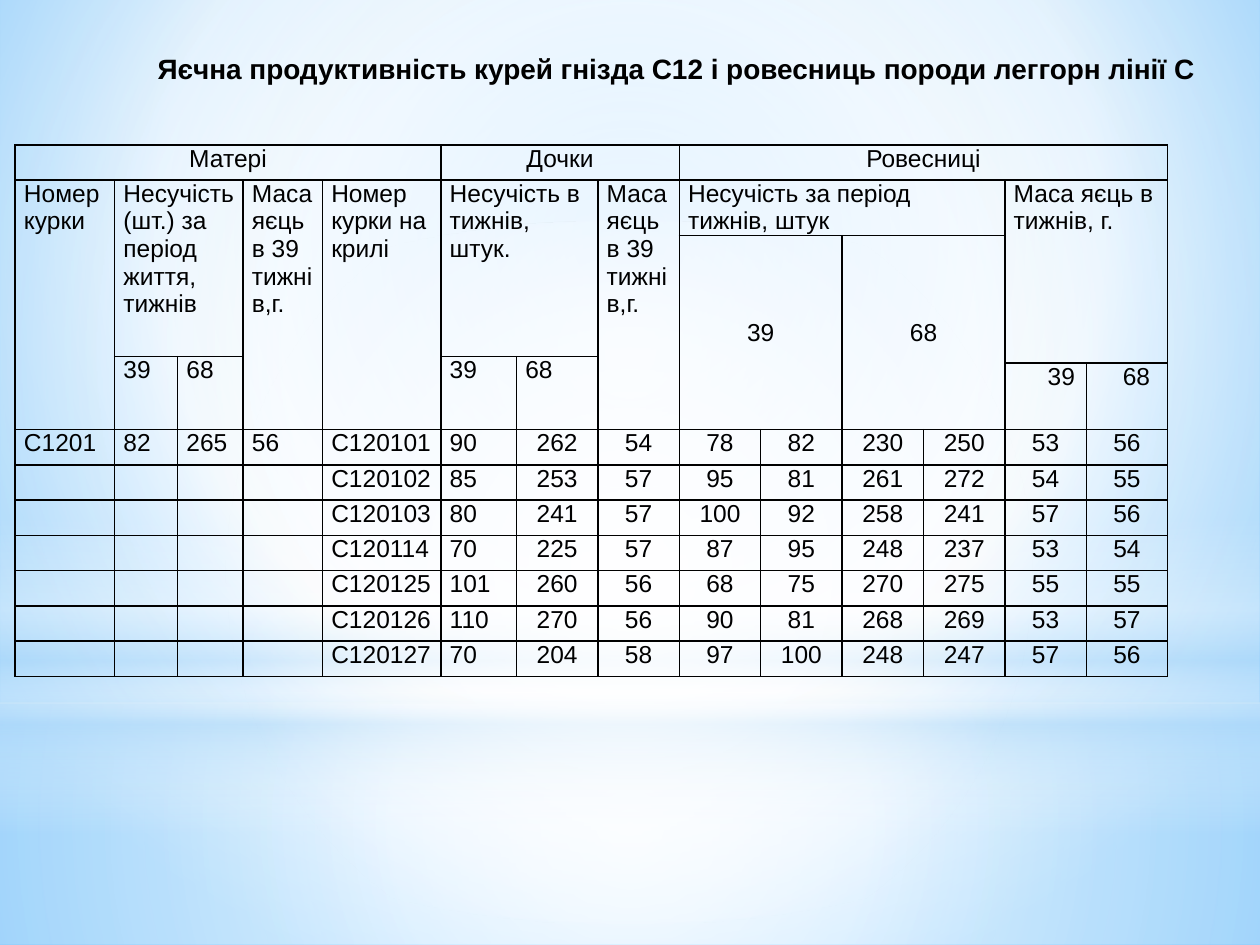
from lxml.etree import SubElement
from pptx import Presentation
from pptx.dml.color import RGBColor
from pptx.enum.shapes import MSO_SHAPE
from pptx.enum.text import MSO_ANCHOR, MSO_AUTO_SIZE, PP_ALIGN
from pptx.oxml.ns import qn
from pptx.util import Inches, Pt

COLORS = {"ink": "000000", "white": "FFFFFF", "haze": "B4DCFA",
          "sky": "9ED5FF", "deep_sky": "5BB9FF"}
FONT = "Arial"
CENTERED = (50, 50, 50, 50)

TITLE = "Яєчна продуктивність курей гнізда С12 і ровесниць породи леггорн лінії С"

NARROW_COLUMNS = [0.79, 0.5, 0.52, 0.63, 0.94, 0.6]
EVEN_COLUMNS = 8
TABLE_WIDTH = 9.15
HEADER_ROWS = [0.28, 0.44, 0.96, 0.05, 0.53]
DATA_ROW = 0.28

EGG_MASS = "Маса яєць в 39 тижнів,г."
MIDDLE = {"align": PP_ALIGN.CENTER, "anchor": MSO_ANCHOR.MIDDLE}
# row, column, rows spanned, columns spanned, text, format
HEADERS = [
    (0, 0, 1, 5, "Матері", {"align": PP_ALIGN.CENTER}),
    (0, 5, 1, 3, "Дочки", {"align": PP_ALIGN.CENTER}),
    (0, 8, 1, 6, "Ровесниці", {"align": PP_ALIGN.CENTER}),
    (1, 0, 4, 1, "Номер курки", {}),
    (1, 1, 2, 2, "Несучість (шт.) за період життя, тижнів", {}),
    (1, 3, 4, 1, EGG_MASS, {}),
    (1, 4, 4, 1, "Номер курки на крилі", {}),
    (1, 5, 2, 2, "Несучість в тижнів, штук.", {}),
    (1, 7, 4, 1, EGG_MASS, {}),
    (1, 8, 1, 4, "Несучість за період\vтижнів, штук", {}),
    (1, 12, 3, 2, "Маса яєць в тижнів, г.", {}),
    (2, 8, 3, 2, "39", MIDDLE),
    (2, 10, 3, 2, "68", MIDDLE),
    (3, 1, 2, 1, "39", {}),
    (3, 2, 2, 1, "68", {}),
    (3, 5, 2, 1, "39", {}),
    (3, 6, 2, 1, "68", {}),
    (4, 12, 1, 1, "39", {"first_indent": 0.27}),
    (4, 13, 1, 1, "68", {"first_indent": 0.22}),
]
MOTHER = ["С1201", 82, 265, 56]
DAUGHTERS = [
    ["С120101", 90, 262, 54, 78, 82, 230, 250, 53, 56],
    ["С120102", 85, 253, 57, 95, 81, 261, 272, 54, 55],
    ["С120103", 80, 241, 57, 100, 92, 258, 241, 57, 56],
    ["С120114", 70, 225, 57, 87, 95, 248, 237, 53, 54],
    ["С120125", 101, 260, 56, 68, 75, 270, 275, 55, 55],
    ["С120126", 110, 270, 56, 90, 81, 268, 269, 53, 57],
    ["С120127", 70, 204, 58, 97, 100, 248, 247, 57, 56],
]


def write(frame, text, size=14, bold=False, align=PP_ALIGN.LEFT,
          anchor=MSO_ANCHOR.TOP, first_indent=0, space_after=6):
    frame.vertical_anchor = anchor
    paragraph = frame.paragraphs[0]
    paragraph.text = text
    paragraph.alignment = align
    paragraph.space_after = Pt(space_after)
    if first_indent:
        paragraph._p.get_or_add_pPr().set("indent", str(Inches(first_indent)))
    for run in paragraph.runs:
        run.font.name = FONT
        run.font.size = Pt(size)
        run.font.bold = bold
        run.font.color.rgb = RGBColor.from_string(COLORS["ink"])


def set_gradient(fill, element, stops, focus=None, angle=None):
    """Fill with (position, colour, opacity) stops, round a focus or along an angle."""
    fill.gradient()
    gradient = element.find(".//" + qn("a:gradFill"))
    gradient.clear()
    stop_list = SubElement(gradient, qn("a:gsLst"))
    for position, color, opacity in stops:
        stop = SubElement(stop_list, qn("a:gs"), pos=str(position * 1000))
        tone = SubElement(stop, qn("a:srgbClr"), val=COLORS[color])
        if opacity < 100:
            SubElement(tone, qn("a:alpha"), val=str(opacity * 1000))
    if focus:
        circle = SubElement(gradient, qn("a:path"), path="circle")
        sides = {side: str(share * 1000) for side, share in zip("ltrb", focus)}
        SubElement(circle, qn("a:fillToRect"), **sides)
    else:
        SubElement(gradient, qn("a:lin"), ang=str(angle * 60000), scaled="0")


class SlideBuilder:
    def __init__(self, slide):
        self.slide = slide

    def background(self, stops, focus):
        set_gradient(self.slide.background.fill, self.slide.element, stops, focus)

    def glow(self, kind, top, height, stops, **direction):
        shape = self.slide.shapes.add_shape(
            kind, Inches(0), Inches(top), Inches(10), Inches(height))
        shape.shadow.inherit = False
        shape.line.fill.background()
        set_gradient(shape.fill, shape._element, stops, **direction)

    def title(self, text):
        box = self.slide.shapes.add_textbox(
            Inches(0.12), Inches(0.29), Inches(10), Inches(0.5))
        box.text_frame.word_wrap = False
        box.text_frame.auto_size = MSO_AUTO_SIZE.SHAPE_TO_FIT_TEXT
        write(box.text_frame, text, size=16, bold=True, align=PP_ALIGN.CENTER,
              anchor=MSO_ANCHOR.MIDDLE, first_indent=0.5, space_after=0)

    def table(self, left, top, widths, heights):
        table = self.slide.shapes.add_table(
            len(heights), len(widths), Inches(left), Inches(top),
            Inches(sum(widths)), Inches(sum(heights))).table
        table.first_row = table.horz_banding = False
        for column, width in zip(table.columns, widths):
            column.width = Inches(width)
        for row, height in zip(table.rows, heights):
            row.height = Inches(height)
        for cell in table.iter_cells():
            self.style_cell(cell)
        return table

    def style_cell(self, cell):
        cell.margin_left = cell.margin_right = Inches(0.07)
        cell.margin_top = cell.margin_bottom = 0
        properties = cell._tc.get_or_add_tcPr()
        for side in ("lnL", "lnR", "lnT", "lnB"):
            border = SubElement(properties, qn("a:" + side), w=str(Pt(1)))
            solid = SubElement(border, qn("a:solidFill"))
            SubElement(solid, qn("a:srgbClr"), val=COLORS["ink"])
        cell.fill.background()
        # Keeps empty cells from growing their row
        SubElement(cell.text_frame.paragraphs[0]._p, qn("a:endParaRPr"), sz="1400")


def main():
    deck = Presentation()
    deck.slide_width, deck.slide_height = Inches(10), Inches(7.5)
    builder = SlideBuilder(deck.slides.add_slide(deck.slide_layouts[6]))

    builder.background([(0, "sky", 100), (60, "white", 100), (100, "deep_sky", 100)],
                       (20, 10, 20, 60))
    builder.glow(MSO_SHAPE.RECTANGLE, 5.58, 1.92,
                 [(0, "white", 91), (37, "white", 76), (100, "haze", 79)], focus=CENTERED)
    builder.glow(MSO_SHAPE.RECTANGLE, 0, 5.58,
                 [(0, "white", 89), (48, "white", 62), (100, "haze", 79)], focus=CENTERED)
    builder.glow(MSO_SHAPE.RECTANGLE, 4.12, 2.5,
                 [(0, "white", 0), (29, "white", 30), (45, "haze", 40),
                  (55, "white", 26), (65, "haze", 60), (100, "white", 0)], angle=90)
    builder.glow(MSO_SHAPE.OVAL, 1.75, 5.58,
                 [(0, "white", 100), (56, "white", 0)], focus=CENTERED)

    even_width = (TABLE_WIDTH - sum(NARROW_COLUMNS)) / EVEN_COLUMNS
    productivity = builder.table(
        0.12, 1.15, NARROW_COLUMNS + [even_width] * EVEN_COLUMNS,
        HEADER_ROWS + [DATA_ROW] * len(DAUGHTERS))
    for row, column, row_span, column_span, text, style in HEADERS:
        cell = productivity.cell(row, column)
        if row_span * column_span > 1:
            cell.merge(productivity.cell(row + row_span - 1, column + column_span - 1))
        write(cell.text_frame, text, anchor=style.get("anchor", MSO_ANCHOR.TOP),
              **{key: value for key, value in style.items() if key != "anchor"})
        cell.vertical_anchor = style.get("anchor", MSO_ANCHOR.TOP)
    for index, daughter in enumerate(DAUGHTERS):
        mother = MOTHER if index == 0 else [None] * len(MOTHER)
        for column, value in enumerate(mother + daughter):
            if value is not None:
                align = PP_ALIGN.LEFT if column < len(NARROW_COLUMNS) else PP_ALIGN.CENTER
                cell = productivity.cell(len(HEADER_ROWS) + index, column)
                write(cell.text_frame, str(value), align=align)

    builder.title(TITLE)
    deck.save("out.pptx")


if __name__ == "__main__":
    main()
